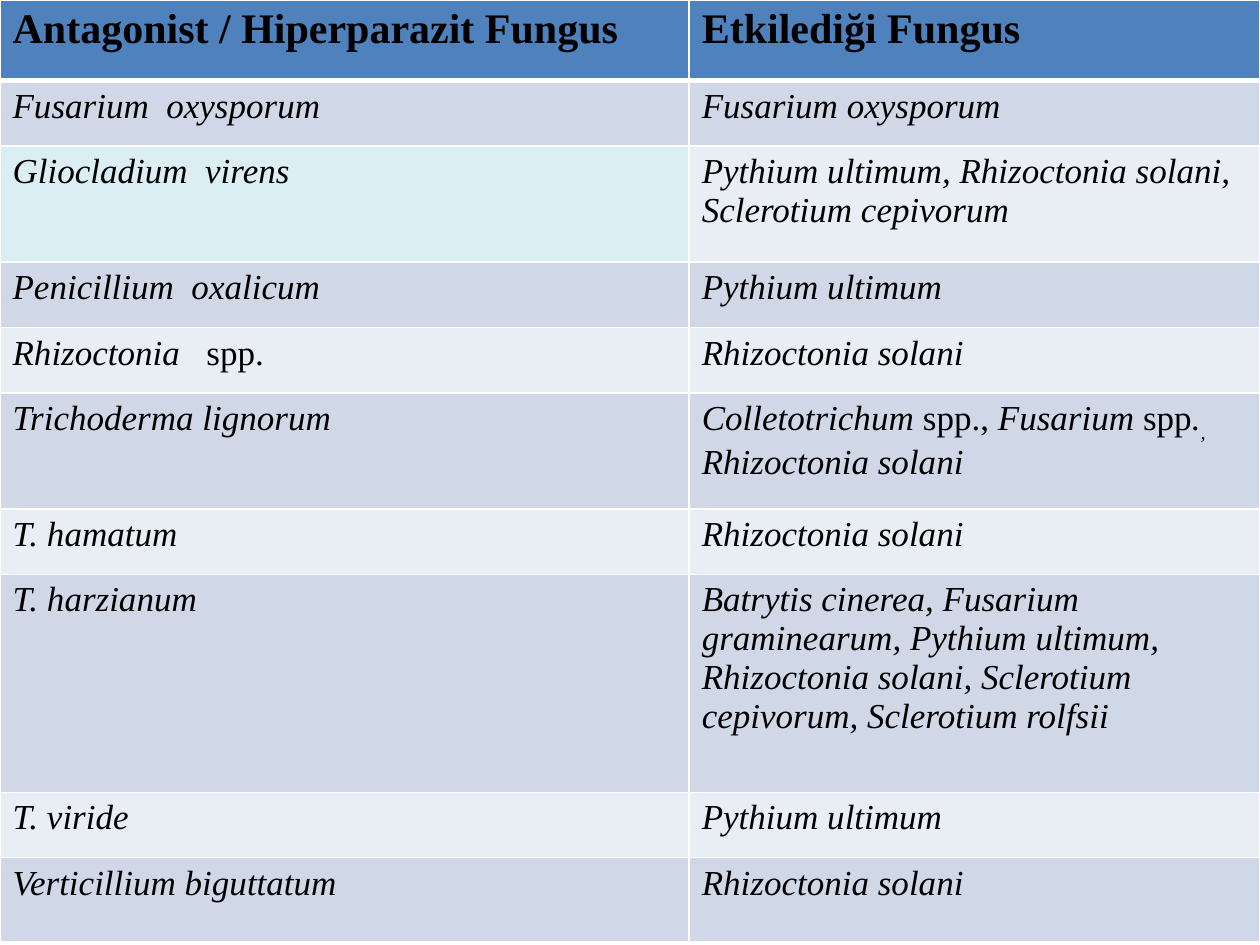
from lxml import etree
from pptx import Presentation
from pptx.dml.color import RGBColor
from pptx.oxml.ns import qn
from pptx.util import Inches, Pt

FONT = "Times New Roman"
BLACK = RGBColor(0x00, 0x00, 0x00)
WHITE = RGBColor(0xFF, 0xFF, 0xFF)
HEADER_BLUE = RGBColor(0x4F, 0x81, 0xBD)
BAND_DARK = RGBColor(0xD0, 0xD8, 0xE8)
BAND_LIGHT = RGBColor(0xE9, 0xED, 0xF4)
HIGHLIGHT = RGBColor(0xDB, 0xEE, 0xF4)

COL_WIDTHS = (5.47, 4.53)
ROW_HEIGHTS = (0.64, 0.52, 0.92, 0.52, 0.52, 0.92, 0.52, 1.73, 0.52, 0.67)
HIGHLIGHT_CELL = (2, 0)

# Run styles: species names are italic, "spp." is upright
HEADER = {"size": 24, "bold": True}
ITALIC = {"italic": True}
UPRIGHT = {}
SUBSCRIPT = {"italic": True, "baseline": -25}

HEADINGS = ("Antagonist / Hiperparazit Fungus", "Etkilediği Fungus")

# A plain string is one italic run; a list holds (text, style) runs
FUNGI = (
    ("Fusarium  oxysporum", "Fusarium oxysporum"),
    ("Gliocladium  virens",
     "Pythium ultimum, Rhizoctonia solani, Sclerotium cepivorum"),
    ("Penicillium  oxalicum", "Pythium ultimum"),
    ([("Rhizoctonia   ", ITALIC), ("spp.", UPRIGHT)], "Rhizoctonia solani"),
    ("Trichoderma lignorum",
     [("Colletotrichum ", ITALIC), ("spp., ", UPRIGHT),
      ("Fusarium ", ITALIC), ("spp", UPRIGHT), (".", ITALIC),
      (", ", SUBSCRIPT), ("Rhizoctonia solani", ITALIC)]),
    ("T. hamatum", "Rhizoctonia solani"),
    ("T. harzianum",
     "Batrytis cinerea, Fusarium graminearum, Pythium ultimum, "
     "Rhizoctonia solani, Sclerotium cepivorum, Sclerotium rolfsii"),
    ("T. viride", "Pythium ultimum"),
    ("Verticillium biguttatum", "Rhizoctonia solani"),
)


def add_run(p, text, size=20, bold=False, italic=False, baseline=0):
    r = p.add_run()
    r.text = text
    r.font.name = FONT
    r.font.size = Pt(size)
    r.font.bold = bold
    r.font.italic = italic
    r.font.color.rgb = BLACK
    if baseline:
        r.font._element.set("baseline", str(baseline * 1000))


def set_borders(cell, **widths):
    """Draw white cell borders; widths are in points by side."""
    tc_pr = cell._tc.get_or_add_tcPr()
    for side, width in widths.items():
        ln = etree.SubElement(tc_pr, qn(f"a:ln{side}"), w=str(Pt(width)))
        fill = etree.SubElement(ln, qn("a:solidFill"))
        etree.SubElement(fill, qn("a:srgbClr"), val=str(WHITE))


def fill_cell(cell, runs, color, top=1, bottom=1):
    set_borders(cell, L=1, R=1, T=top, B=bottom)
    cell.fill.solid()
    cell.fill.fore_color.rgb = color
    p = cell.text_frame.paragraphs[0]
    for text, style in runs:
        add_run(p, text, **style)


def add_fungus_table(slide):
    table = slide.shapes.add_table(
        len(ROW_HEIGHTS), len(COL_WIDTHS), Inches(0), Inches(0),
        Inches(sum(COL_WIDTHS)), Inches(sum(ROW_HEIGHTS))).table
    for column, width in zip(table.columns, COL_WIDTHS):
        column.width = Inches(width)
    for row, height in zip(table.rows, ROW_HEIGHTS):
        row.height = Inches(height)

    # Header row, with a thicker rule below
    for j, heading in enumerate(HEADINGS):
        fill_cell(table.cell(0, j), [(heading, HEADER)], HEADER_BLUE, bottom=3)

    # Banded body rows
    for i, row in enumerate(FUNGI, start=1):
        band = BAND_DARK if i % 2 else BAND_LIGHT
        for j, content in enumerate(row):
            runs = [(content, ITALIC)] if isinstance(content, str) else content
            color = HIGHLIGHT if (i, j) == HIGHLIGHT_CELL else band
            fill_cell(table.cell(i, j), runs, color, top=3 if i == 1 else 1)


def main():
    prs = Presentation()
    prs.slide_width = Inches(10)
    prs.slide_height = Inches(7.5)
    slide = prs.slides.add_slide(prs.slide_layouts[6])
    add_fungus_table(slide)
    prs.save("out.pptx")


if __name__ == "__main__":
    main()
